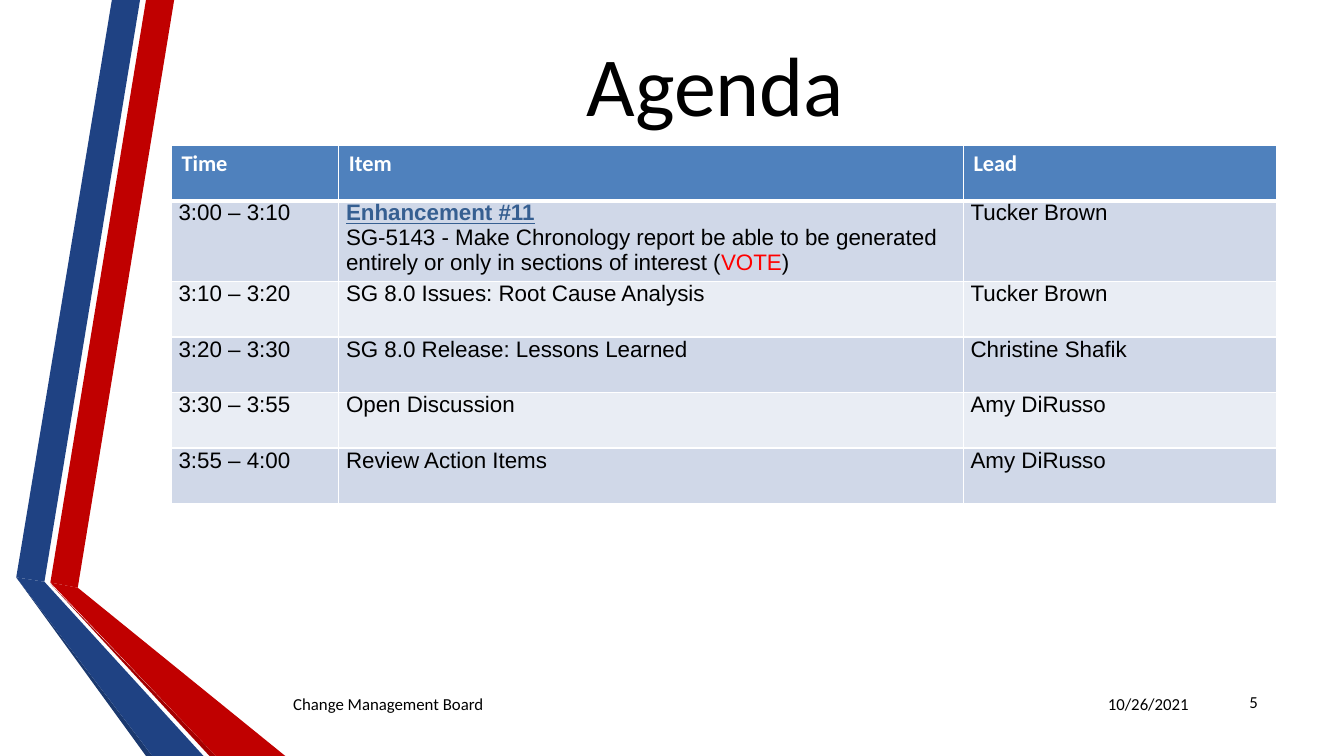
from lxml import etree
from pptx import Presentation
from pptx import util as u
from pptx.dml.color import RGBColor
from pptx.enum import text
from pptx.oxml.ns import qn

BLACK, WHITE, RED, BLUE = "000000", "FFFFFF", "C00000", "1F4283"
WIDTH, HEIGHT = 33.87, 19.05

RIBBONS = [
    (RED, [(1.27, 14.68), (1.96, 14.81), (4.39, 0), (3.68, 0)]),
    (BLUE, [(3.53, 0), (2.82, 0), (0.41, 14.55), (1.12, 14.66)]),
    ("1B396F", [(0.41, 14.55), (3.68, HEIGHT), (3.84, HEIGHT)]),
    ("A40000", [(1.27, 14.71), (5.28, HEIGHT), (5.44, HEIGHT)]),
    (RED, [(1.27, 14.68), (5.44, HEIGHT), (7.19, HEIGHT), (1.96, 14.81)]),
    (BLUE, [(5.13, HEIGHT), (1.12, 14.66), (0.41, 14.55), (3.84, HEIGHT)]),
]

ENHANCEMENT = [
    [("Enhancement #11", "365F91", True)],
    [("SG-5143 - Make Chronology report be able to be generated "
      "entirely or only in sections of interest (", BLACK, False),
     ("VOTE", "FF0000", False), (")", BLACK, False)],
]


def plain(words, color=BLACK):
    return [[(words, color, False)]]


AGENDA = [
    ("3:00 – 3:10", ENHANCEMENT, "Tucker Brown"),
    ("3:10 – 3:20", plain("SG 8.0 Issues: Root Cause Analysis"), "Tucker Brown"),
    ("3:20 – 3:30", plain("SG 8.0 Release: Lessons Learned"), "Christine Shafik"),
    ("3:30 – 3:55", plain("Open Discussion"), "Amy DiRusso"),
    ("3:55 – 4:00", plain("Review Action Items"), "Amy DiRusso"),
]


def rgb(color):
    return RGBColor.from_string(color)


def add_run(p, words, size, font, color, bold=False, underline=False):
    r = p.add_run()
    r.text = words
    r.font.size = u.Pt(size)
    r.font.name = font
    r.font.color.rgb = rgb(color)
    r.font.bold = bold
    r.font.underline = underline


def add_label(s, box, words, size, align):
    sp = s.shapes.add_textbox(*[u.Cm(n) for n in box])
    tf = sp.text_frame
    tf.word_wrap = True
    tf.vertical_anchor = text.MSO_ANCHOR.MIDDLE
    p = tf.paragraphs[0]
    p.alignment = align
    add_run(p, words, size, "Calibri", BLACK)


def add_ribbons(s, left, top):
    for color, points in RIBBONS:
        corners = [(u.Cm(left + x), u.Cm(top + y)) for x, y in points]
        builder = s.shapes.build_freeform(*corners[0])
        builder.add_line_segments(corners[1:], close=True)
        sp = builder.convert_to_shape()
        sp.shadow.inherit = False
        sp.fill.solid()
        sp.fill.fore_color.rgb = rgb(color)
        sp.line.fill.background()


def set_borders(cell, widths):
    tcPr = cell._tc.get_or_add_tcPr()
    for side, width in zip("LRTB", widths):
        ln = etree.SubElement(tcPr, qn("a:ln" + side), w=str(u.Pt(width)))
        fill = etree.SubElement(ln, qn("a:solidFill"))
        etree.SubElement(fill, qn("a:srgbClr"), val=WHITE)


def fill_cell(cell, paragraphs, fill, font, header, below_header):
    set_borders(cell, (1, 1, 3 if below_header else 1, 3 if header else 1))
    cell.fill.solid()
    cell.fill.fore_color.rgb = rgb(fill)
    if not header:
        cell.margin_left = cell.margin_right = u.Cm(0.18)
        cell.margin_top = cell.margin_bottom = 0
    tf = cell.text_frame
    for i, runs in enumerate(paragraphs):
        p = tf.add_paragraph() if i else tf.paragraphs[0]
        for words, color, strong in runs:
            add_run(p, words, 16, font, color, header or strong, strong)


def add_agenda(s, left, top, width):
    row_height = 1.4
    count = len(AGENDA) + 1
    frame = s.shapes.add_table(count, 3, u.Cm(left), u.Cm(top),
                               u.Cm(width), u.Cm(row_height * count))
    table = frame.table
    time, lead = 4.22, 7.88
    for column, w in zip(table.columns, (time, width - time - lead, lead)):
        column.width = u.Cm(w)
    for j, heading in enumerate(("Time", "Item", "Lead")):
        fill_cell(table.cell(0, j), plain(heading, WHITE), "4F81BD",
                  "Calibri", True, False)
    for i, (slot, item, person) in enumerate(AGENDA, 1):
        fill = "D0D8E8" if i % 2 else "E9EDF4"
        for j, paragraphs in enumerate((plain(slot), item, plain(person))):
            fill_cell(table.cell(i, j), paragraphs, fill, "Arial", False, i == 1)


def add_footer(s, left, top, height):
    align = text.PP_ALIGN
    add_label(s, (left, top, 19.69, height), "Change Management Board", 12, align.LEFT)
    add_label(s, (left + 19.89, top, 3.18, height), "10/26/2021", 12, align.RIGHT)
    add_label(s, (left + 23.29, top - 0.05, 1.52, height), "5", 12, align.RIGHT)


def main():
    prs = Presentation()
    prs.slide_width, prs.slide_height = u.Cm(WIDTH), u.Cm(HEIGHT)
    s = prs.slides.add_slide(prs.slide_layouts[6])
    add_ribbons(s, 0, 0)
    add_label(s, (4.11, 0.66, 27.84, 2.84), "Agenda", 60, text.PP_ALIGN.CENTER)
    add_agenda(s, 4.32, 3.66, 27.84)
    add_footer(s, 7.14, 17.22, 1.02)
    prs.save("out.pptx")


if __name__ == "__main__":
    main()
